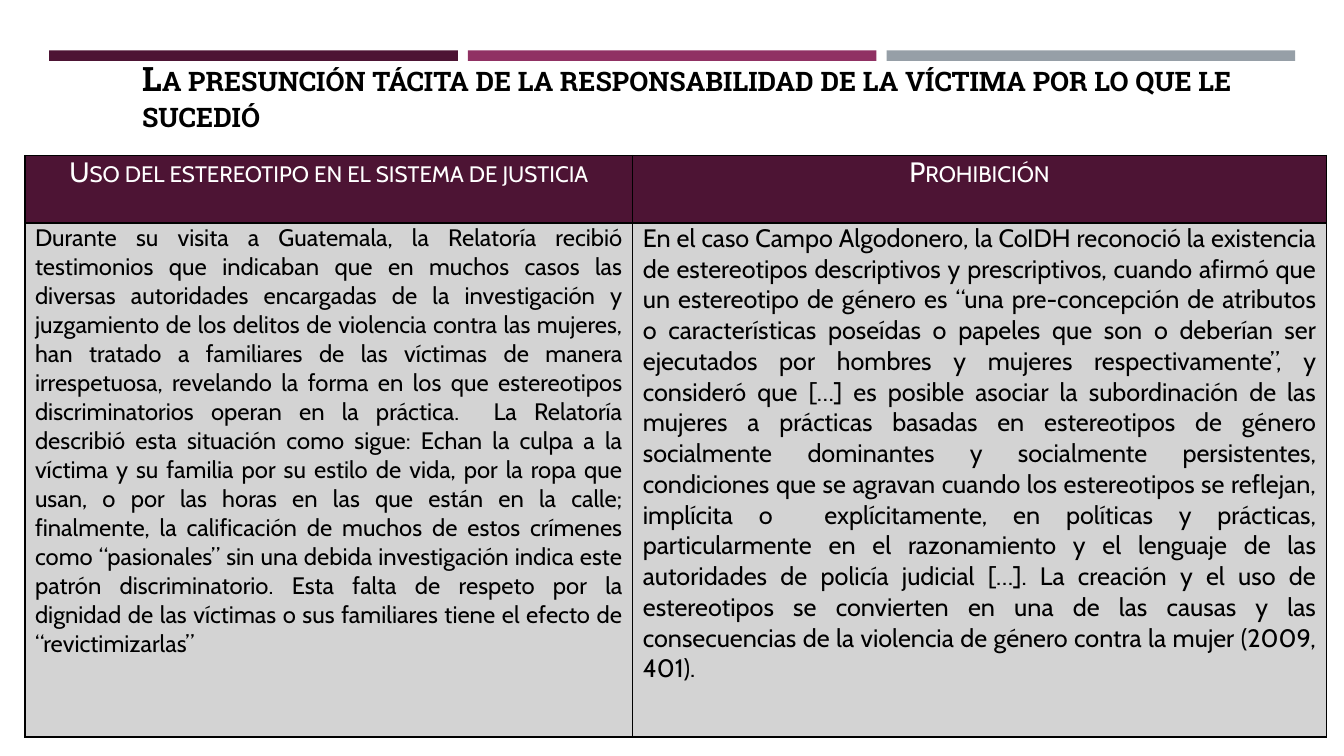
from dataclasses import dataclass

from lxml import etree
from pptx import Presentation
from pptx.dml import color
from pptx.enum import shapes, text
from pptx.oxml import ns
from pptx.util import Pt


@dataclass(frozen=True)
class Theme:
    plum: str = "4D1434"
    rose: str = "903163"
    steel: str = "969FA7"
    pale: str = "D3D3D3"
    ink: str = "000000"
    white: str = "FFFFFF"
    head: str = "Roboto Slab"
    body: str = "Cabin"
    title: float = 24
    label: float = 20
    left: float = 17
    right: float = 18


LOOK = Theme()
ALIGN = text.PP_ALIGN
TITLE = ["La presunción tácita de la responsabilidad de la víctima por lo que le sucedió"]
LABELS = ["Uso del estereotipo en el sistema de justicia", "Prohibición"]
USE = [
    "Durante su visita a Guatemala, la Relatoría recibió testimonios que indicaban "
    "que en muchos casos las diversas autoridades encargadas de la investigación y "
    "juzgamiento de los delitos de violencia contra las mujeres, han tratado a "
    "familiares de las víctimas de manera irrespetuosa, revelando la forma en los que "
    "estereotipos discriminatorios operan en la práctica.  ",
    "La Relatoría describió esta situación como sigue: Echan la culpa a la víctima y su "
    "familia por su estilo de vida, por la ropa que usan, o por las horas en las que "
    "están en la calle; finalmente, la calificación de muchos de estos crímenes como "
    "“pasionales” sin una debida investigación indica este patrón discriminatorio. ",
    "Esta falta de respeto por la dignidad de las víctimas o sus familiares tiene el "
    "efecto de “revictimizarlas”",
]
BAN = [
    "En el caso Campo Algodonero, la CoIDH reconoció la existencia de estereotipos "
    "descriptivos y prescriptivos, cuando afirmó que un estereotipo de género es “una "
    "pre-concepción de atributos o características poseídas o papeles que son o deberían "
    "ser ejecutados por hombres y mujeres respectivamente”, ",
    "y consideró que […] es posible asociar la subordinación de las mujeres a prácticas "
    "basadas en estereotipos de género socialmente dominantes y socialmente persistentes, "
    "condiciones que se agravan cuando los estereotipos se reflejan, implícita o  "
    "explícitamente, en políticas y prácticas, particularmente en el razonamiento y el "
    "lenguaje de las autoridades de policía judicial […]. ",
    "La creación y el uso de estereotipos se convierten en una de las causas y las "
    "consecuencias de la violencia de género contra la mujer (2009, 401).",
]


def paint(fill, tone):
    fill.solid()
    fill.fore_color.rgb = color.RGBColor.from_string(tone)


def write(para, parts, face, size, tone, align, bold=False, small=False):
    para.alignment = align
    for words in parts:
        run = para.add_run()
        run.text = words
        run.font.name = face
        run.font.size = Pt(size)
        run.font.bold = bold
        run.font.color.rgb = color.RGBColor.from_string(tone)
        if small:
            run._r.get_or_add_rPr().set("cap", "small")


def edge(cell, tone):
    props = cell._tc.get_or_add_tcPr()
    for spot, side in enumerate(("lnL", "lnR", "lnT", "lnB")):
        line = etree.Element(ns.qn(f"a:{side}"), w=str(Pt(1)))
        fill = etree.SubElement(line, ns.qn("a:solidFill"))
        etree.SubElement(fill, ns.qn("a:srgbClr"), val=tone)
        props.insert(spot, line)


def add_bars(slide, x, y, w, h, gap=7.2):
    tones = (LOOK.plum, LOOK.rose, LOOK.steel)
    span = (w - gap * (len(tones) - 1)) / len(tones)
    for i, tone in enumerate(tones):
        bar = slide.shapes.add_shape(
            shapes.MSO_SHAPE.RECTANGLE, Pt(x + i * (span + gap)), Pt(y), Pt(span), Pt(h))
        bar.shadow.inherit = False
        paint(bar.fill, tone)
        bar.line.fill.background()


def add_title(slide, x, y, w, h):
    title = slide.shapes.title
    title.left, title.top, title.width, title.height = map(Pt, (x, y, w, h))
    frame = title.text_frame
    frame.word_wrap = True
    frame.auto_size = text.MSO_AUTO_SIZE.NONE
    frame.vertical_anchor = text.MSO_ANCHOR.BOTTOM
    para = frame.paragraphs[0]
    para.line_spacing = 0.9
    write(para, TITLE, LOOK.head, LOOK.title, LOOK.ink, ALIGN.LEFT, bold=True, small=True)


def fill_cell(cell, back, pad, parts, **style):
    paint(cell.fill, back)
    edge(cell, LOOK.ink)
    cell.margin_left = cell.margin_right = Pt(pad)
    cell.margin_top = cell.margin_bottom = 0
    cell.vertical_anchor = text.MSO_ANCHOR.TOP
    write(cell.text_frame.paragraphs[0], parts, LOOK.body, **style)


def add_grid(slide, x, y, w, h, split=434.2, top=48.3):
    grid = slide.shapes.add_table(2, 2, Pt(x), Pt(y), Pt(w), Pt(h)).table
    grid.first_row = grid.horz_banding = False
    for col, wide in zip(grid.columns, (split, w - split)):
        col.width = Pt(wide)
    for row, tall in zip(grid.rows, (top, h - top)):
        row.height = Pt(tall)
    for i, words in enumerate(LABELS):
        fill_cell(grid.cell(0, i), LOOK.plum, 5, [words], size=LOOK.label,
                  tone=LOOK.white, align=ALIGN.CENTER, small=True)
    for i, (parts, size) in enumerate(((USE, LOOK.left), (BAN, LOOK.right))):
        fill_cell(grid.cell(1, i), LOOK.pale, 7.2, parts, size=size,
                  tone=LOOK.ink, align=ALIGN.JUSTIFY)


def main():
    deck = Presentation()
    deck.slide_width, deck.slide_height = Pt(960), Pt(540)
    slide = deck.slides.add_slide(deck.slide_layouts[5])
    add_bars(slide, 35.2, 36, 890, 7.5)
    add_title(slide, 94.3, 20, 798, 80)
    add_grid(slide, 17.8, 111, 929.6, 415.5)
    deck.save("out.pptx")


if __name__ == "__main__":
    main()
